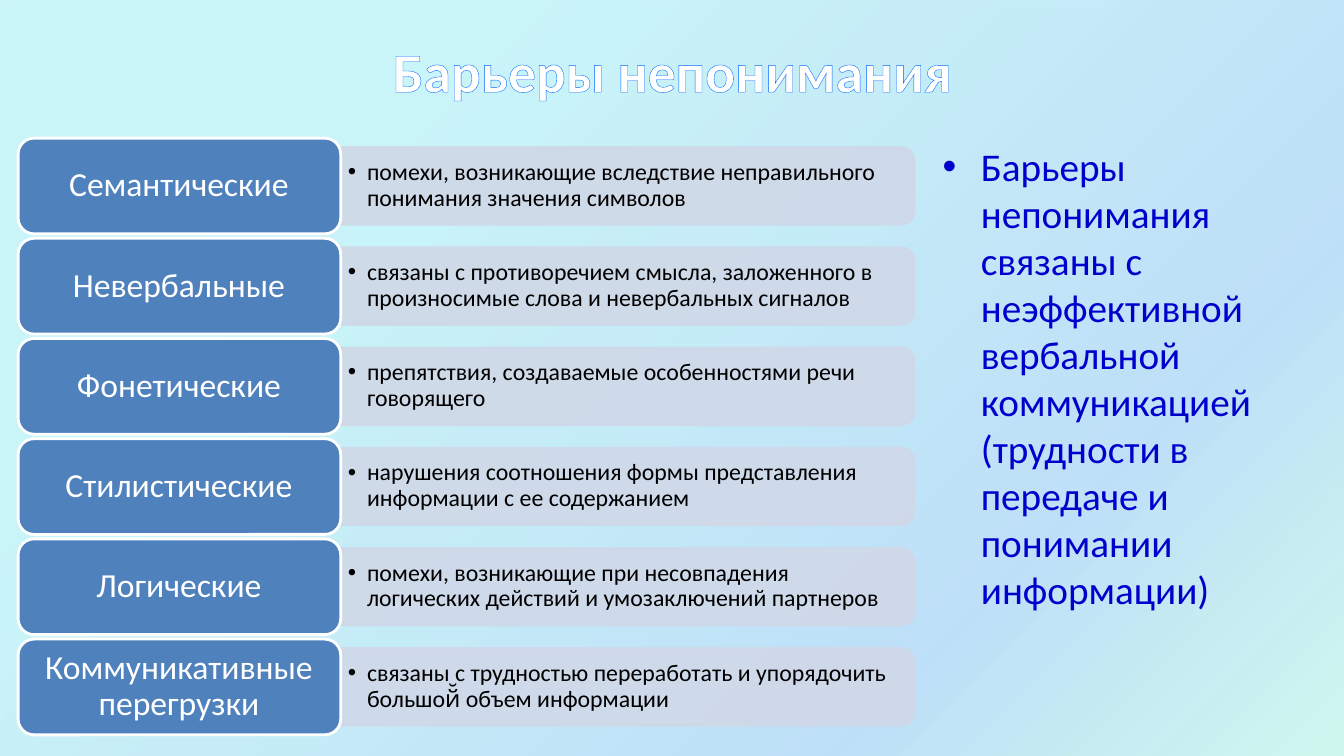
from dataclasses import dataclass

import pptx
import pptx.dml.color
import pptx.enum.shapes
import pptx.enum.text
import pptx.oxml
import pptx.oxml.ns
import pptx.util

Inches = pptx.util.Inches
Pt = pptx.util.Pt
RGBColor = pptx.dml.color.RGBColor
Form = pptx.enum.shapes.MSO_SHAPE
Align = pptx.enum.text.PP_ALIGN
Anchor = pptx.enum.text.MSO_ANCHOR
qn = pptx.oxml.ns.qn

WHITE = RGBColor(0xFF, 0xFF, 0xFF)
BLACK = RGBColor(0, 0, 0)
NAVY = RGBColor(0, 0, 0xCC)
EDGE = RGBColor(0, 0x66, 0xFF)
STEEL = RGBColor(0x4F, 0x81, 0xBD)
PALE = RGBColor(0xD0, 0xD8, 0xE8)

# Gradient stops: position %, colour, opacity %
STOPS = [
    (25, RGBColor(0x21, 0xD6, 0xE0), 23),
    (75, RGBColor(0, 0x87, 0xE6), 25),
    (100, RGBColor(0x03, 0xD4, 0xA8), 18),
    (100, RGBColor(0, 0x5C, 0xBF), 26),
]
NS = pptx.oxml.ns.nsdecls("a")


@dataclass
class Box:
    left: float
    top: float
    width: float
    height: float

    def place(self) -> list:
        return [Inches(n) for n in (self.left, self.top, self.width, self.height)]


@dataclass
class Style:
    size: float
    color: RGBColor
    align: Align = Align.LEFT
    anchor: Anchor = Anchor.MIDDLE
    bold: bool = False
    indent: float = 0
    lines: float = 1.0
    inset: tuple = (0.1, 0.05)


@dataclass
class Row:
    name: str
    note: str


ROWS = [
    Row("Семантические", "помехи, возникающие вследствие неправильного понимания значения символов"),
    Row("Невербальные", "связаны с противоречием смысла, заложенного в произносимые слова и невербальных сигналов"),
    Row("Фонетические", "препятствия, создаваемые особенностями речи говорящего"),
    Row("Стилистические", "нарушения соотношения формы представления информации с ее содержанием"),
    Row("Логические", "помехи, возникающие при несовпадения логических действий и умозаключений партнеров"),
    Row("Коммуникативные перегрузки", "связаны с трудностью переработать и упорядочить большой̆ объем информации"),
]

TITLE = Style(39.6, WHITE, Align.CENTER, bold=True)
BODY = Style(28, NAVY, anchor=Anchor.TOP, indent=0.38)
NAME = Style(24, WHITE, Align.CENTER, lines=0.9)
NOTE = Style(17, BLACK, indent=0.19, lines=0.9, inset=(0.07, 0.04))

FIRST, LAST = 1.37, 6.34
STEP = (LAST - FIRST) / (len(ROWS) - 1)
HIGH = 0.95


def add_text(slide, box: Box, text: str, style: Style):
    frame = slide.shapes.add_textbox(*box.place()).text_frame
    frame.word_wrap = True
    frame.vertical_anchor = style.anchor
    frame.margin_left = frame.margin_right = Inches(style.inset[0])
    frame.margin_top = frame.margin_bottom = Inches(style.inset[1])
    frame.text = text
    para = frame.paragraphs[0]
    para.alignment = style.align
    para.line_spacing = style.lines
    if style.indent:
        props = para._p.get_or_add_pPr()
        props.set("marL", str(Inches(style.indent)))
        props.set("indent", str(-Inches(style.indent)))
        props.append(pptx.oxml.parse_xml(f'<a:buFont {NS} typeface="Arial"/>'))
        props.append(pptx.oxml.parse_xml(f'<a:buChar {NS} char="•"/>'))
    run = para.runs[0]
    run.font.name = "Calibri"
    run.font.size = Pt(style.size)
    run.font.bold = style.bold
    run.font.color.rgb = style.color
    return run


def add_form(slide, kind: Form, box: Box, fill: RGBColor, line: RGBColor):
    shape = slide.shapes.add_shape(kind, *box.place())
    shape.shadow.inherit = False
    shape.fill.solid()
    shape.fill.fore_color.rgb = fill
    shape.line.color.rgb = line
    shape.line.width = Pt(2)
    return shape


def add_back(slide) -> None:
    shape = slide.shapes.add_shape(Form.RECTANGLE, *Box(0, 0, 13.33, 7.67).place())
    shape.shadow.inherit = False
    shape.line.fill.background()
    stops = "".join(
        f'<a:gs pos="{pos * 1000}"><a:srgbClr val="{color}">'
        f'<a:alpha val="{alpha * 1000}"/></a:srgbClr></a:gs>'
        for pos, color, alpha in STOPS
    )
    grad = pptx.oxml.parse_xml(
        f'<a:gradFill {NS}><a:gsLst>{stops}</a:gsLst><a:lin ang="2700000" scaled="0"/></a:gradFill>'
    )
    shape._element.spPr.find(qn("a:prstGeom")).addnext(grad)


def add_row(slide, row: Row, top: float) -> None:
    # Note bar, turned so that its round corners face right
    wide, tall = 5.69, 0.76
    bar = Box(6.22 - tall / 2, top + HIGH / 2 - wide / 2, tall, wide)
    shape = add_form(slide, Form.ROUND_2_SAME_RECTANGLE, bar, PALE, PALE)
    shape.rotation = 90
    for color in shape._element.spPr.iter(qn("a:srgbClr")):
        color.append(pptx.oxml.parse_xml(f'<a:alpha {NS} val="90000"/>'))
    add_text(slide, Box(3.38, top + 0.13, 5.65, 0.68), row.note, NOTE)
    # Name block
    add_form(slide, Form.ROUNDED_RECTANGLE, Box(0.18, top, 3.2, HIGH), STEEL, WHITE)
    add_text(slide, Box(0.22, top + 0.045, 3.11, 0.86), row.name, NAME)


def main() -> None:
    deck = pptx.Presentation()
    deck.slide_width, deck.slide_height = Inches(13.33), Inches(7.5)
    slide = deck.slides.add_slide(deck.slide_layouts[6])
    add_back(slide)

    # Title with outlined letters
    run = add_text(slide, Box(0.67, 0.3, 12, 0.79), "Барьеры непонимания", TITLE)
    edge = pptx.oxml.parse_xml(
        f'<a:ln {NS} w="{Pt(1.45)}"><a:solidFill><a:srgbClr val="{EDGE}"/></a:solidFill></a:ln>'
    )
    run.font._element.insert(0, edge)

    # Summary at right
    add_text(
        slide,
        Box(9.25, 1.36, 3.92, 4.95),
        "Барьеры непонимания связаны с неэффективной вербальной коммуникацией "
        "(трудности в передаче и понимании информации)",
        BODY,
    )

    # Barrier list
    for i, row in enumerate(ROWS):
        add_row(slide, row, FIRST + i * STEP)
    deck.save("out.pptx")


if __name__ == "__main__":
    main()
